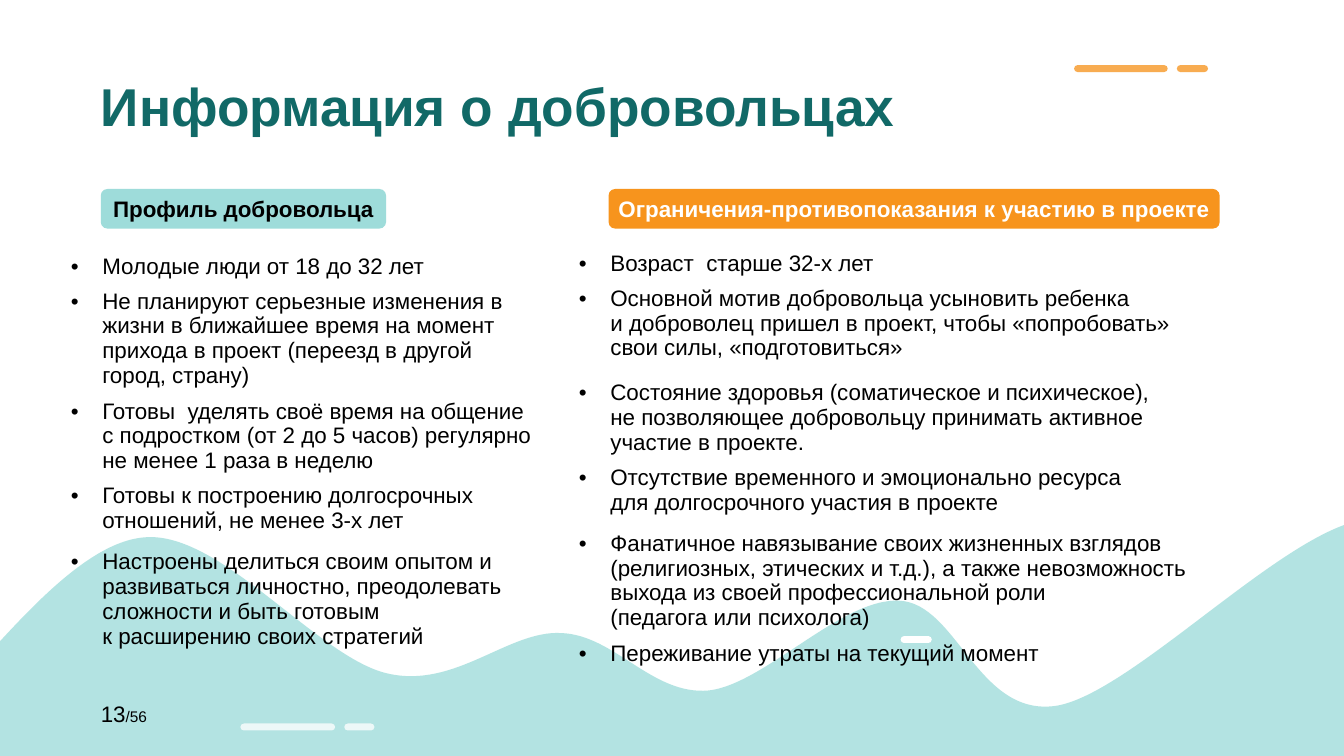
"""Build a slide on volunteer profiles and contraindications."""
from dataclasses import dataclass

from lxml import etree
from pptx import Presentation
from pptx.dml.color import RGBColor
from pptx.enum.shapes import MSO_CONNECTOR, MSO_SHAPE
from pptx.enum.text import MSO_ANCHOR, PP_ALIGN
from pptx.oxml.ns import qn
from pptx.util import Pt

ROUNDED = MSO_SHAPE.ROUNDED_RECTANGLE
STRAIGHT = MSO_CONNECTOR.STRAIGHT
MIDDLE = MSO_ANCHOR.MIDDLE
LEFT, CENTER = PP_ALIGN.LEFT, PP_ALIGN.CENTER
NO_GRID_STYLE = "{2D5ABB26-0587-4C30-8999-92F81FD0307C}"


@dataclass(frozen=True)
class Theme:
    font: str = "Arial"
    title_color: RGBColor = RGBColor(0x11, 0x69, 0x67)
    mint: RGBColor = RGBColor(0x9E, 0xDC, 0xDA)
    orange: RGBColor = RGBColor(0xF7, 0x94, 0x1D)
    black: RGBColor = RGBColor(0, 0, 0)
    white: RGBColor = RGBColor(0xFF, 0xFF, 0xFF)
    title_size: int = 38
    body_size: int = 16
    small_size: int = 11


theme = Theme()


def add_span(para, text, size, color, bold=False):
    span = para.add_run()
    span.text = text
    span.font.name = theme.font
    span.font.size = Pt(size)
    span.font.bold = bold
    span.font.color.rgb = color


def set_opacity(shape, percent):
    color = next(shape.element.spPr.iter(qn("a:srgbClr")))
    etree.SubElement(color, qn("a:alpha"), val=str(percent * 1000))


deck = Presentation()
deck.slide_width, deck.slide_height = Pt(960), Pt(540)
page = deck.slides.add_slide(deck.slide_layouts[5])

wave_left, wave_top, wave_width, wave_height = -162.7, 370.6, 1249.9, 190.8
wave_start = (-44.6, 504.7)
wave_curves = [
    ((-10.8, 475.9), (50.4, 387.4), (103.7, 383.8)),
    ((157.7, 379.4), (226.8, 469.4), (276.5, 481)),
    ((325.4, 492.5), (362.9, 450), (401, 452.2)),
    ((439.2, 453.6), (465.8, 496.8), (506.2, 493.2)),
    ((545.8, 488.9), (601.2, 427), (642.2, 429.1)),
    ((684, 430.6), (698.4, 513.4), (755.3, 504)),
    ((812.2, 493.9), (929.5, 365.8), (984.2, 370.8)),
    ((1039, 375.8), (1099.4, 506.2), (1085.8, 535.7)),
    ((1072.1, 565.2), (1108.8, 555.1), (911.5, 558.7)),
    ((714.2, 561.6), (61.9, 564.5), (-97.2, 555.8)),
    ((-257, 546.5), (-78.5, 533.5), wave_start),
]
outline = page.shapes.build_freeform(Pt(wave_start[0]), Pt(wave_start[1]))
outline.add_line_segments([(Pt(x), Pt(y)) for *_, (x, y) in wave_curves], close=True)
wave = outline.convert_to_shape()
wave.left, wave.top = Pt(wave_left), Pt(wave_top)
wave.width, wave.height = Pt(wave_width), Pt(wave_height)
contour = next(wave.element.iter(qn("a:pathLst")))[0]
contour.set("w", str(Pt(wave_width)))
contour.set("h", str(Pt(wave_height)))
for piece in list(contour):
    contour.remove(piece)
segments = [("a:moveTo", [wave_start])]
segments += [("a:cubicBezTo", curve) for curve in wave_curves]
for tag, points in segments:
    segment = etree.SubElement(contour, qn(tag))
    for x, y in points:
        etree.SubElement(segment, qn("a:pt"),
                         x=str(Pt(x - wave_left)), y=str(Pt(y - wave_top)))
etree.SubElement(contour, qn("a:close"))
wave.shadow.inherit = False
wave.fill.solid()
wave.fill.fore_color.rgb = theme.mint
wave.line.fill.background()
set_opacity(wave, 78)

title = page.shapes.title
title.left, title.top, title.width, title.height = Pt(64.8), Pt(29.8), Pt(648), Pt(90)
title.text_frame.vertical_anchor = MIDDLE
title.text_frame.word_wrap = True
title_para = title.text_frame.paragraphs[0]
title_para.alignment = LEFT
add_span(title_para, "Информация о добровольцах", theme.title_size, theme.title_color, True)

restrictions = [
    "Возраст  старше 32-х лет",
    "Основной мотив добровольца усыновить ребенка \n"
    "и доброволец пришел в проект, чтобы «попробовать» \n"
    "свои силы, «подготовиться»",
    "Состояние здоровья (соматическое и психическое), \n"
    "не позволяющее добровольцу принимать активное \n"
    "участие в проекте.",
    "Отсутствие временного и эмоционально ресурса \n"
    "для долгосрочного участия в проекте",
    "Фанатичное навязывание своих жизненных взглядов (религиозных, этических и т.д.), "
    "а также невозможность выхода из своей профессиональной роли \n"
    "(педагога или психолога)",
    "Переживание утраты на текущий момент",
]
profile = [
    "Молодые люди от 18 до 32 лет",
    "Не планируют серьезные изменения в жизни в ближайшее время на момент "
    "прихода в проект (переезд в другой город, страну)",
    "Готовы  уделять своё время на общение с подростком (от 2 до 5 часов) регулярно\n"
    "не менее 1 раза в неделю",
    "Готовы к построению долгосрочных отношений, не менее 3-х лет",
    "Настроены делиться своим опытом и развиваться личностно, преодолевать "
    "сложности и быть готовым \nк расширению своих стратегий",
]
lists = [
    (406.3, 175.7, 482.4, restrictions, [25, 67.7, 60.5, 46.8, 78.6, 34.6]),
    (43.4, 177.8, 345.6, profile, [25, 78.6, 60.5, 46.8, 78.6]),
]
for left, top, width, items, heights in lists:
    frame = page.shapes.add_table(
        len(items), 1, Pt(left), Pt(top), Pt(width), Pt(sum(heights)))
    table = frame.table
    table.first_row = table.horz_banding = False
    next(frame.element.iter(qn("a:tableStyleId"))).text = NO_GRID_STYLE
    for row, item, height in zip(table.rows, items, heights):
        row.height = Pt(height)
        cell = row.cells[0]
        cell.fill.background()
        para = cell.text_frame.paragraphs[0]
        for index, line in enumerate(item.split("\n")):
            if index:
                para.add_line_break()
            add_span(para, line, theme.body_size, theme.black)
        settings = para._p.get_or_add_pPr()
        settings.set("marL", str(Pt(22.5)))
        settings.set("indent", str(Pt(-22.5)))
        etree.SubElement(settings, qn("a:buFont"), typeface=theme.font)
        etree.SubElement(settings, qn("a:buChar"), char="•")

badges = [
    (72, 203.8, "Профиль добровольца", theme.mint, theme.black),
    (434.7, 436.5, "Ограничения-противопоказания к участию в проекте",
     theme.orange, theme.white),
]
for left, width, label, fill, color in badges:
    badge = page.shapes.add_shape(ROUNDED, Pt(left), Pt(135), Pt(width), Pt(28.3))
    badge.shadow.inherit = False
    badge.fill.solid()
    badge.fill.fore_color.rgb = fill
    badge.line.fill.background()
    badge.text_frame.word_wrap = False
    badge.text_frame.vertical_anchor = MIDDLE
    badge_para = badge.text_frame.paragraphs[0]
    badge_para.alignment = CENTER
    add_span(badge_para, label, theme.body_size, color, True)

number_box = page.shapes.add_textbox(Pt(72), Pt(500.4), Pt(36), Pt(19.4))
number_text = number_box.text_frame
number_text.word_wrap = False
number_text.margin_left = number_text.margin_right = 0
number_text.margin_top = number_text.margin_bottom = 0
number_para = number_text.paragraphs[0]
add_span(number_para, "13", theme.body_size, theme.black)
add_span(number_para, "/56", theme.small_size, theme.black)

dashes = [
    (174.2, 236.9, 519.3, theme.white, 76),
    (248.4, 265, 519.3, theme.white, 76),
    (645.8, 663.1, 457, theme.white, 100),
    (769.7, 831.6, 49, theme.orange, 76),
    (843.1, 860.4, 49, theme.orange, 76),
]
for start, end, height, color, opacity in dashes:
    dash = page.shapes.add_connector(STRAIGHT, Pt(start), Pt(height), Pt(end), Pt(height))
    dash.line.color.rgb = color
    dash.line.width = Pt(5)
    dash.line._get_or_add_ln().set("cap", "rnd")
    etree.SubElement(dash.element.spPr, qn("a:effectLst"))
    if opacity < 100:
        set_opacity(dash, opacity)

deck.save("out.pptx")
